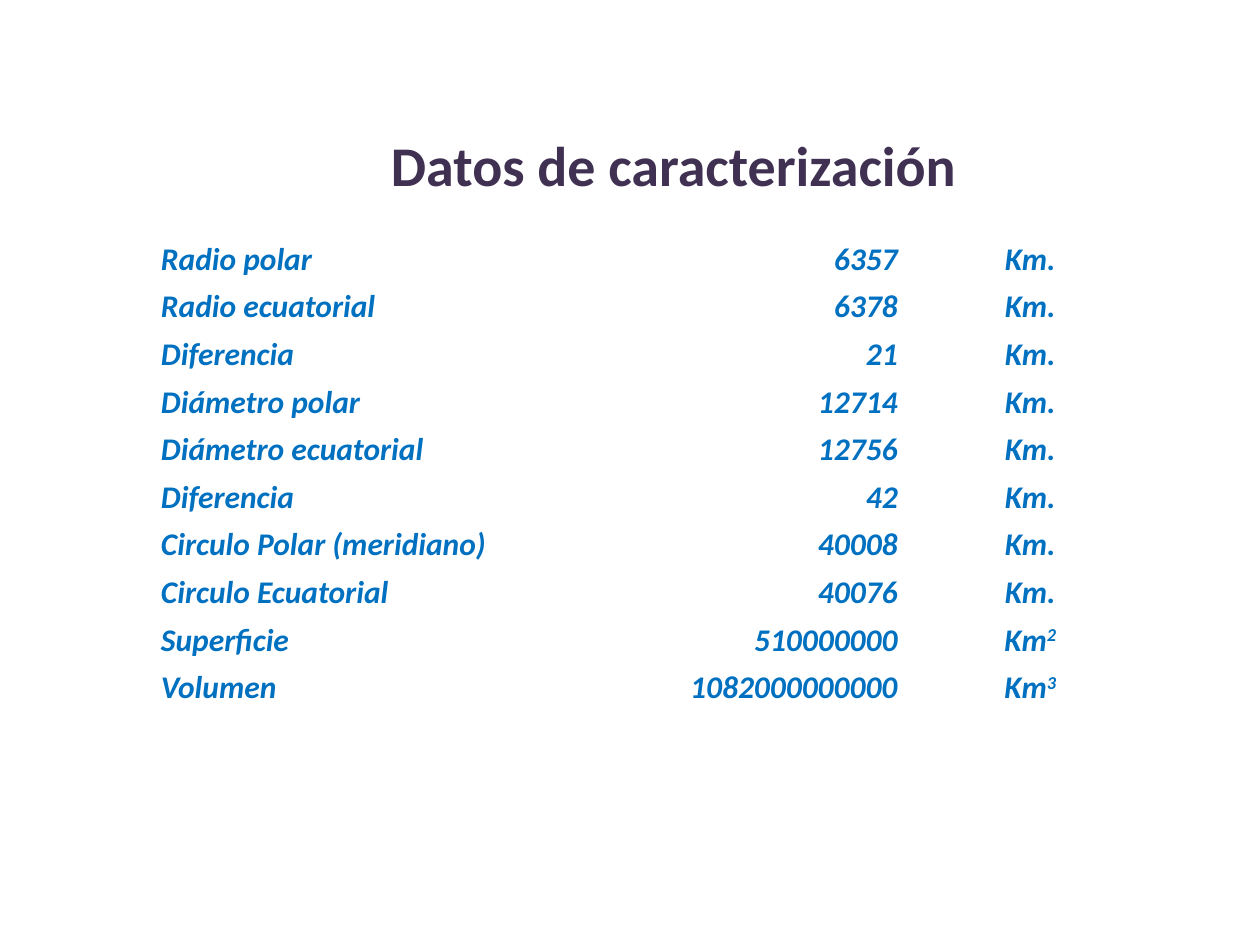
from typing import NamedTuple

from pptx import Presentation
from pptx import util as u
from pptx.dml.color import RGBColor
from pptx.enum import text

COLOURS = {"title": "403152", "data": "0070C0"}
FONT = "Calibri"
ALIGN = text.PP_ALIGN
COLUMN_WIDTHS = (221, 225, 126.5)
COLUMN_ALIGNS = (ALIGN.JUSTIFY, ALIGN.RIGHT, ALIGN.CENTER)
ROW_HEIGHT = 27.23


class Measure(NamedTuple):
    label: str
    value: str
    unit: str = "Km."
    power: str = ""


MEASURES = (
    Measure("Radio polar", "6357"),
    Measure("Radio ecuatorial", "6378"),
    Measure("Diferencia", "21"),
    Measure("Diámetro polar", "12714"),
    Measure("Diámetro ecuatorial", "12756"),
    Measure("Diferencia", "42"),
    Measure("Circulo Polar (meridiano)", "40008"),
    Measure("Circulo Ecuatorial", "40076"),
    Measure("Superficie", "510000000", "Km", "2"),
    Measure("Volumen", "1082000000000", "Km", "3"),
)


def add_span(para, words: str, *, size: float, colour: str,
             italic: bool = False, superscript: bool = False) -> None:
    span = para.add_run()
    span.text = words
    font = span.font
    font.name, font.size = FONT, u.Pt(size)
    font.bold, font.italic = True, italic
    font.color.rgb = RGBColor.from_string(COLOURS[colour])
    if superscript:
        span._r.get_or_add_rPr().set("baseline", "30000")


def add_title(page, words: str) -> None:
    box = page.shapes.title
    box.left, box.top = u.Pt(155.5), u.Pt(71)
    box.width, box.height = u.Pt(459), u.Pt(46)
    box.text_frame.auto_size = text.MSO_AUTO_SIZE.SHAPE_TO_FIT_TEXT
    para = box.text_frame.paragraphs[0]
    para.alignment = ALIGN.CENTER
    add_span(para, words, size=32, colour="title")


def fill_cell(cell, words: str, align: ALIGN, power: str = "") -> None:
    cell.fill.background()
    cell.margin_left = cell.margin_right = u.Pt(3.5)
    cell.margin_top = cell.margin_bottom = u.Pt(0)
    para = cell.text_frame.paragraphs[0]
    para.alignment = align
    para.line_spacing = 1.15
    para.space_after = u.Pt(10)
    properties = para._p.get_or_add_pPr()
    properties.set("marL", "0")
    properties.set("indent", str(u.Pt(18)))
    add_span(para, words, size=18, colour="data", italic=True)
    if power:
        add_span(para, power, size=18, colour="data", italic=True, superscript=True)


def add_measures(page, measures: tuple[Measure, ...]) -> None:
    table = page.shapes.add_table(
        len(measures), len(COLUMN_WIDTHS), u.Pt(70.5), u.Pt(134),
        u.Pt(sum(COLUMN_WIDTHS)), u.Pt(ROW_HEIGHT * len(measures))).table
    table.first_row = table.horz_banding = False
    for column, width in zip(table.columns, COLUMN_WIDTHS):
        column.width = u.Pt(width)
    for row, measure in zip(table.rows, measures):
        row.height = u.Pt(ROW_HEIGHT)
        powers = ("", "", measure.power)
        for cell, words, align, power in zip(row.cells, measure, COLUMN_ALIGNS, powers):
            fill_cell(cell, words, align, power)


def main() -> None:
    deck = Presentation()
    deck.slide_width, deck.slide_height = u.Pt(720), u.Pt(540)
    page = deck.slides.add_slide(deck.slide_layouts[5])
    add_measures(page, MEASURES)
    add_title(page, "Datos de caracterización")
    deck.save("out.pptx")


if __name__ == "__main__":
    main()
